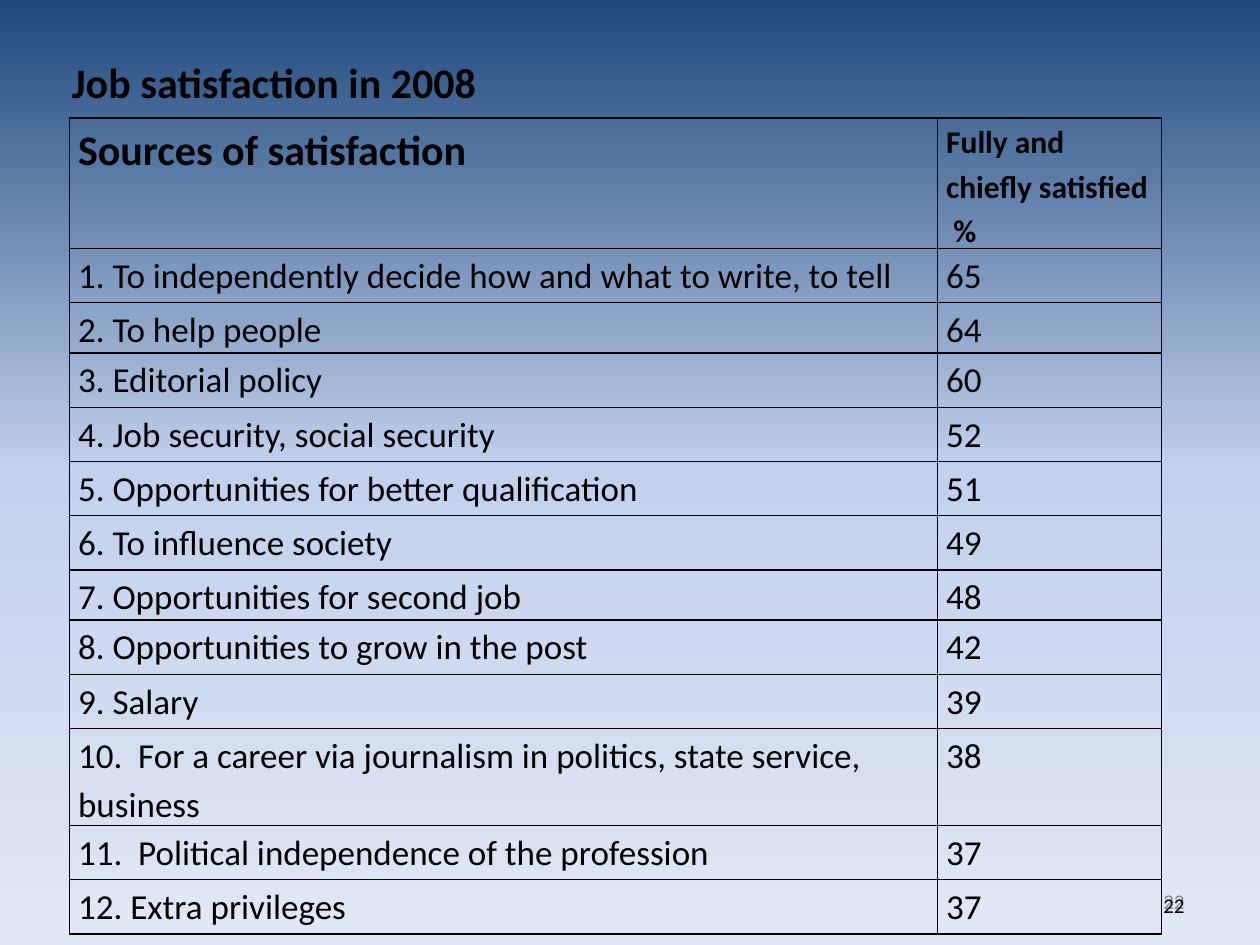
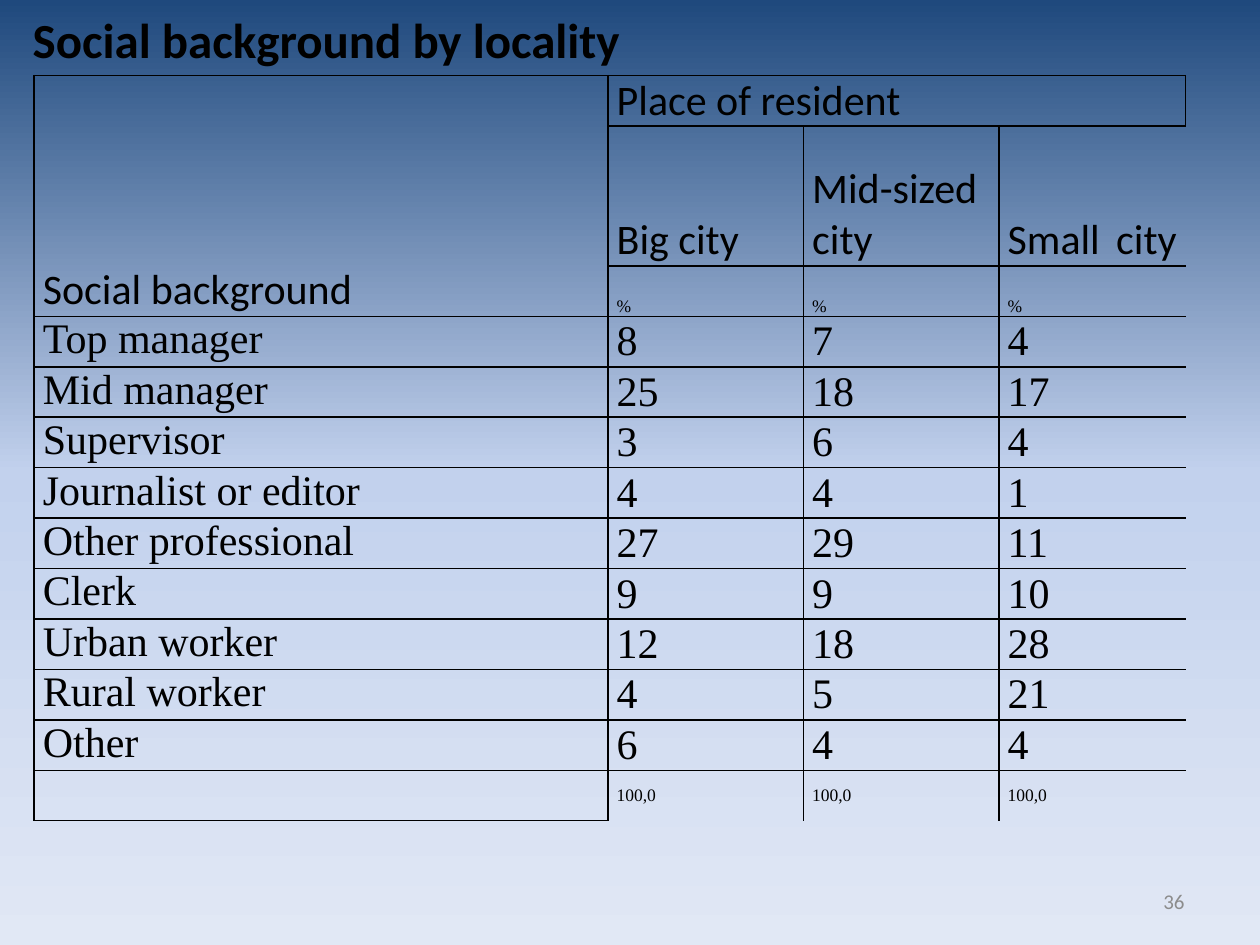
from collections import namedtuple
from copy import deepcopy

from pptx import Presentation
from pptx.dml.color import RGBColor
from pptx.enum.text import MSO_ANCHOR as Anchor, MSO_AUTO_SIZE as AutoSize, PP_ALIGN as Align
from pptx.oxml.ns import qn
from pptx.oxml.xmlchemy import OxmlElement
from pptx.util import Emu, Inches, Pt

# Shared look: lengths are shares of the slide's width and height
Box = namedtuple("Box", "left top width height")
WIDTH, HEIGHT = Inches(10), Inches(7.5)
SKY = [(0, "1F497D"), (0.5, "C2D1ED"), (1, "E1E8F5")]
INK, MUTED = "000000", "8C8C8C"
SANS, SERIF = "Calibri", "Times New Roman"
FOOTER = Box(0.717, 0.927, 0.233, 0.053)
RAISED_FOOTER = Box(0.717, 0.911, 0.233, 0.067)
SIDES = {"L": "left", "R": "right", "T": "top", "B": "bottom"}

SATISFACTION = [
    ("1. To independently decide how and what to write, to tell", 65),
    ("2. To help people", 64),
    ("3. Editorial policy", 60),
    ("4. Job security, social security", 52),
    ("5. Opportunities for better qualification", 51),
    ("6. To influence society", 49),
    ("7. Opportunities for second job", 48),
    ("8. Opportunities to grow in the post", 42),
    ("9. Salary", 39),
    ("10.  For a career via journalism in politics, state service, business", 38),
    ("11.  Political independence of the profession", 37),
    ("12. Extra privileges", 37),
]
SATISFACTION_ROWS = [1.03, 0.43, 0.4, *[0.43] * 4, 0.4, 0.43, 0.43, 0.77, 0.43, 0.43]

CITIES = ["Big city", "Mid-sized city ", "Small city "]
BACKGROUNDS = [
    ("Top manager", 8, 7, 4),
    ("Mid manager", 25, 18, 17),
    ("Supervisor", 3, 6, 4),
    ("Journalist or editor", 4, 4, 1),
    ("Other professional", 27, 29, 11),
    ("Clerk", 9, 9, 10),
    ("Urban worker", 12, 18, 28),
    ("Rural worker", 4, 5, 21),
    ("Other", 6, 4, 4),
]
BACKGROUND_ROWS = [0.4, 1.11, *[0.4] * 11]


def color(hex_code):
    return RGBColor.from_string(hex_code)


def to_emu(box):
    return [Emu(int(share * side)) for share, side in zip(box, (WIDTH, HEIGHT) * 2)]


def write(frame, text, size=20, font=SANS, ink=INK, bold=False, align=Align.LEFT, spacing=1.0):
    line = frame.paragraphs[0]
    line.alignment, line.line_spacing = align, spacing
    run = line.add_run()
    run.text = str(text)
    run.font.size, run.font.name, run.font.bold = Pt(size), font, bold
    run.font.color.rgb = color(ink)


def paint_background(master):
    sky = master.background.fill
    sky.gradient()
    sky.gradient_angle = 270
    stop_list = master.element.find(".//" + qn("a:gsLst"))
    stop_list.append(deepcopy(stop_list[-1]))
    for stop, (position, shade) in zip(sky.gradient_stops, SKY):
        stop.position = position
        stop.color.rgb = color(shade)


def add_titled_slide(deck, heading, box, size):
    slide = deck.slides.add_slide(deck.slide_layouts[5])
    title = slide.shapes.title
    title.left, title.top, title.width, title.height = to_emu(box)
    frame = title.text_frame
    frame.auto_size, frame.word_wrap = AutoSize.NONE, True
    frame.vertical_anchor = Anchor.MIDDLE
    write(frame, heading, size=size, bold=True)
    return slide


def add_page_number(slide, number, box=FOOTER, ink=MUTED, anchor=Anchor.MIDDLE):
    frame = slide.shapes.add_textbox(*to_emu(box)).text_frame
    frame.word_wrap, frame.vertical_anchor = True, anchor
    write(frame, number, size=12, ink=ink, align=Align.RIGHT)


def set_borders(cell, drawn):
    """Rule the sides named in drawn and clear the others."""
    properties = cell._tc.get_or_add_tcPr()
    for position, side in enumerate(SIDES):
        border = OxmlElement(f"a:ln{side}")
        border.set("w", str(Pt(1)))
        fill = OxmlElement("a:solidFill" if side in drawn else "a:noFill")
        if side in drawn:
            shade = OxmlElement("a:srgbClr")
            shade.set("val", INK)
            fill.append(shade)
        border.append(fill)
        properties.insert(position, border)


def add_grid(slide, box, column_weights, row_weights, borders):
    """Add an unfilled table; borders(row, column) names the ruled sides."""
    left, top, width, height = to_emu(box)
    table = slide.shapes.add_table(
        len(row_weights), len(column_weights), left, top, width, height).table
    table.first_row = table.horz_banding = False
    for column, weight in zip(table.columns, column_weights):
        column.width = int(width * weight / sum(column_weights))
    for r, (row, weight) in enumerate(zip(table.rows, row_weights)):
        row.height = int(height * weight / sum(row_weights))
        for c, cell in enumerate(row.cells):
            cell.fill.background()
            cell.margin_left = cell.margin_right = Inches(0.07)
            cell.margin_top = cell.margin_bottom = 0
            set_borders(cell, borders(r, c))
    return table


def fill_cell(cell, text, anchor=Anchor.TOP, **style):
    cell.vertical_anchor = anchor
    write(cell.text_frame, text, **style)


def add_satisfaction_table(slide, box):
    table = add_grid(slide, box, [6.89, 1.78], SATISFACTION_ROWS, lambda r, c: "LRTB")
    loose = {"spacing": 1.15}
    # Header
    fill_cell(table.cell(0, 0), "Sources of satisfaction", size=24, bold=True, **loose)
    fill_cell(table.cell(0, 1), "Fully and chiefly satisfied  %", size=18, bold=True, **loose)
    # Sources and their shares
    for r, answer in enumerate(SATISFACTION, 1):
        for c, entry in enumerate(answer):
            fill_cell(table.cell(r, c), entry, **loose)


def background_borders(r, c):
    last_row = len(BACKGROUND_ROWS) - 1
    right_open = c == len(CITIES) and r > 0
    bottom_open = c > 0 and r == last_row
    return "LT" + ("" if right_open else "R") + ("" if bottom_open else "B")


def add_background_table(slide, box):
    table = add_grid(slide, box, [4.55, 1.55, 1.55, 1.48], BACKGROUND_ROWS, background_borders)
    head = {"size": 24, "anchor": Anchor.BOTTOM, "align": Align.JUSTIFY}
    body = {"font": SERIF, "align": Align.JUSTIFY}
    # Header with merged cells
    table.cell(0, 0).merge(table.cell(2, 0))
    table.cell(0, 1).merge(table.cell(0, len(CITIES)))
    fill_cell(table.cell(0, 0), "Social background ", **head)
    fill_cell(table.cell(0, 1), "Place of resident", **head)
    # Cities, units and totals
    for c, city in enumerate(CITIES, 1):
        fill_cell(table.cell(1, c), city, **head)
        fill_cell(table.cell(2, c), "%", size=10, anchor=Anchor.BOTTOM, **body)
        fill_cell(table.cell(len(BACKGROUND_ROWS) - 1, c), "100,0", size=10,
                  anchor=Anchor.MIDDLE, **body)
    # Backgrounds and their shares
    for r, background in enumerate(BACKGROUNDS, 3):
        for c, entry in enumerate(background):
            fill_cell(table.cell(r, c), entry, size=24,
                      anchor=Anchor.MIDDLE if c else Anchor.TOP, **body)


def build_satisfaction_slide(deck):
    slide = add_titled_slide(deck, "Job satisfaction in 2008", Box(0.047, 0.053, 0.4, 0.067), 24)
    add_page_number(slide, 22)
    add_page_number(slide, 22, RAISED_FOOTER, INK, Anchor.BOTTOM)
    add_satisfaction_table(slide, Box(0.055, 0.125, 0.867, 0.863))


def build_background_slide(deck):
    slide = add_titled_slide(deck, "Social background by locality", Box(0.016, 0.003, 0.52, 0.076), 28)
    add_page_number(slide, 36)
    add_background_table(slide, Box(0.027, 0.08, 0.914, 0.788))


def main():
    deck = Presentation()
    deck.slide_width, deck.slide_height = WIDTH, HEIGHT
    paint_background(deck.slide_master)
    build_satisfaction_slide(deck)
    build_background_slide(deck)
    deck.save("out.pptx")


if __name__ == "__main__":
    main()
